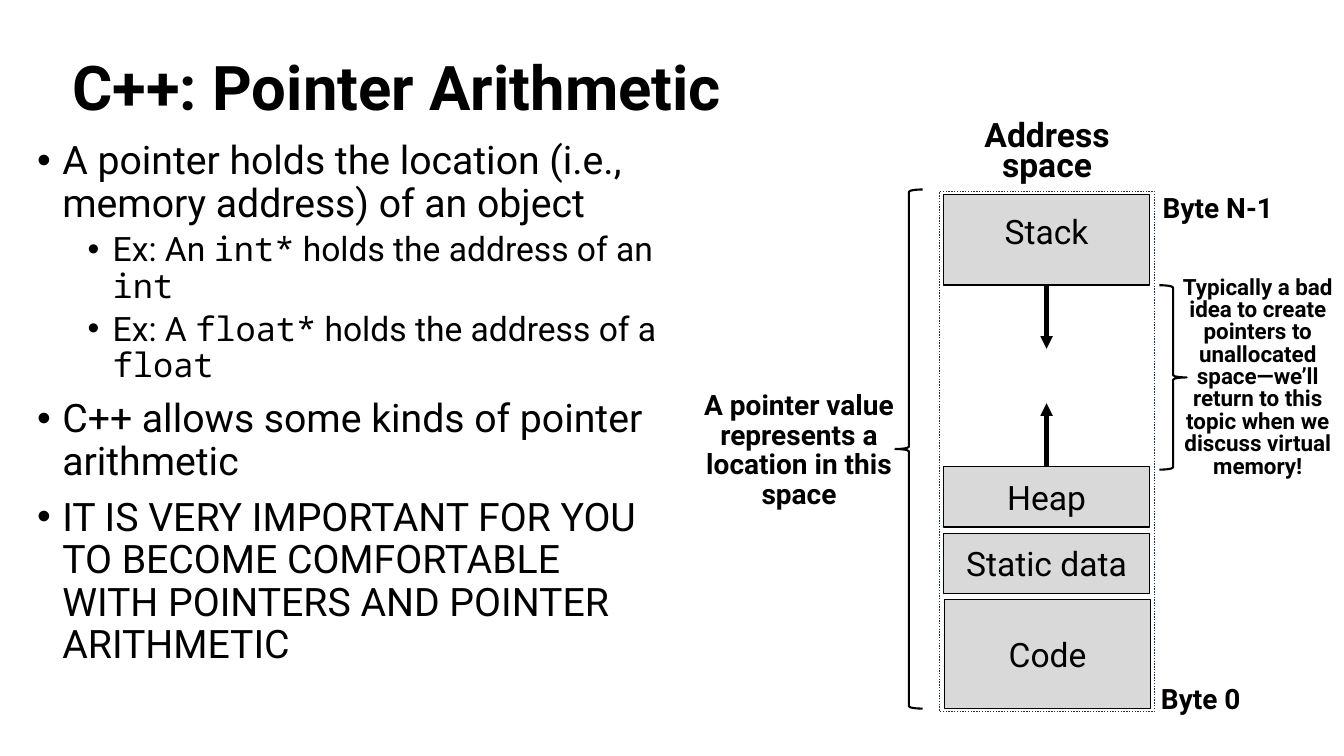
from dataclasses import dataclass

from lxml.etree import SubElement
from pptx import Presentation
from pptx.dml.color import RGBColor
from pptx.enum.dml import MSO_LINE
from pptx.enum.shapes import MSO_CONNECTOR, MSO_SHAPE
from pptx.enum.text import MSO_ANCHOR, MSO_AUTO_SIZE, PP_ALIGN
from pptx.oxml.ns import qn
from pptx.shapes.autoshape import Shape
from pptx.slide import Slide
from pptx.util import Inches, Length, Pt

BLACK = RGBColor(0x00, 0x00, 0x00)
GRAY = RGBColor(0xD9, 0xD9, 0xD9)
NAVY = RGBColor(0x1E, 0x32, 0x56)
FONT = "Roboto"
CODE_FONT = "Noto Sans Mono"


@dataclass(frozen=True)
class Box:
    left: float
    top: float
    width: float
    height: float

    def lengths(self) -> tuple[Length, Length, Length, Length]:
        return (Inches(self.left), Inches(self.top),
                Inches(self.width), Inches(self.height))


@dataclass(frozen=True)
class Label:
    text: str
    box: Box
    size: int
    spacing: float | Length = 1.0


@dataclass(frozen=True)
class Region:
    name: str
    box: Box
    spacing: float | Length = 1.0


@dataclass(frozen=True)
class Brace:
    kind: MSO_SHAPE
    box: Box


@dataclass(frozen=True)
class Arrow:
    start_y: float
    end_y: float


@dataclass(frozen=True)
class Bullet:
    pieces: tuple[str, ...]  # plain text and code alternate
    level: int = 0


BULLETS = [
    Bullet(("A pointer holds the location (i.e., memory address) of an object",)),
    Bullet(("Ex: An ", "int*", " holds the address of an ", "int"), 1),
    Bullet(("Ex: A ", "float*", " holds the address of a ", "float"), 1),
    Bullet(("C++ allows some kinds of pointer arithmetic",)),
    Bullet(("IT IS VERY IMPORTANT FOR YOU TO BECOME COMFORTABLE "
            "WITH POINTERS AND POINTER ARITHMETIC",)),
]
LABELS = [
    Label("Byte 0", Box(11.06, 6.71, 1.7, 0.44), 20),
    Label("Byte N-1", Box(11.23, 1.84, 1.7, 0.44), 20),
    Label("Address space", Box(9.32, 1.19, 2.13, 0.69), 24, Pt(21)),
    Label("A pointer value represents a location in this space",
          Box(6.67, 3.84, 2.51, 1.28), 20, Pt(21)),
    Label("Typically a bad idea to create pointers to unallocated space—we’ll "
          "return to this topic when we discuss virtual memory!",
          Box(11.59, 2.7, 1.77, 2.12), 16, Pt(16)),
]
ADDRESS_SPACE = Box(9.32, 1.9, 2.13, 5.16)
REGIONS = [
    Region("Stack", Box(9.36, 1.93, 2.04, 0.9), Pt(16)),
    Region("Heap", Box(9.36, 4.63, 2.04, 0.6)),
    Region("Static data", Box(9.36, 5.29, 2.04, 0.6)),
    Region("Code", Box(9.37, 5.95, 2.04, 1.08)),
]
ARROW_X = 10.38
ARROWS = [Arrow(2.83, 3.46), Arrow(4.63, 4.0)]
BRACES = [
    Brace(MSO_SHAPE.LEFT_BRACE, Box(8.88, 1.88, 0.27, 5.15)),
    Brace(MSO_SHAPE.RIGHT_BRACE, Box(11.5, 2.83, 0.27, 1.83)),
]


def write_centered(shape: Shape, text: str, size: int, bold: bool,
                   spacing: float | Length) -> None:
    shape.text_frame.word_wrap = True
    paragraph = shape.text_frame.paragraphs[0]
    paragraph.text = text
    paragraph.alignment = PP_ALIGN.CENTER
    paragraph.line_spacing = spacing
    font = paragraph.font
    font.name, font.size, font.bold = FONT, Pt(size), bold
    font.color.rgb = BLACK


def add_title(slide: Slide, text: str) -> None:
    title = slide.shapes.title
    title.left, title.top, title.width, title.height = Box(-0.14, 0.44, 8.16, 0.92).lengths()
    title.text_frame.auto_size = MSO_AUTO_SIZE.NONE
    title.text_frame.vertical_anchor = MSO_ANCHOR.MIDDLE
    write_centered(title, text, 44, True, 0.9)


def add_bullets(slide: Slide, box: Box, bullets: list[Bullet]) -> None:
    frame = slide.shapes.add_textbox(*box.lengths()).text_frame
    frame.word_wrap = True
    for index, bullet in enumerate(bullets):
        paragraph = frame.add_paragraph() if index else frame.paragraphs[0]
        paragraph.level = bullet.level
        paragraph.line_spacing = 0.9
        paragraph.space_before = Pt(5 if bullet.level else 10)
        paragraph.font.size = Pt(24 if bullet.level else 28)
        paragraph.font.color.rgb = BLACK
        for position, piece in enumerate(bullet.pieces):
            run = paragraph.add_run()
            run.text = piece
            run.font.name = CODE_FONT if position % 2 else FONT
        # Bullet mark with a hanging indent
        properties = paragraph._p.get_or_add_pPr()
        properties.set("marL", str(Inches(0.25 + 0.5 * bullet.level)))
        properties.set("indent", str(Inches(-0.25)))
        mark_font = properties.makeelement(qn("a:buFont"), {"typeface": "Arial"})
        mark = properties.makeelement(qn("a:buChar"), {"char": "•"})
        properties.find(qn("a:spcBef")).addnext(mark_font)
        mark_font.addnext(mark)


def add_label(slide: Slide, label: Label) -> None:
    text_box = slide.shapes.add_textbox(*label.box.lengths())
    write_centered(text_box, label.text, label.size, True, label.spacing)


def add_outline(slide: Slide, kind: MSO_SHAPE, box: Box, color: RGBColor,
                width: float) -> Shape:
    shape = slide.shapes.add_shape(kind, *box.lengths())
    shape.shadow.inherit = False
    shape.fill.background()
    shape.line.color.rgb = color
    shape.line.width = Pt(width)
    return shape


def add_region(slide: Slide, region: Region) -> None:
    shape = add_outline(slide, MSO_SHAPE.RECTANGLE, region.box, BLACK, 1)
    shape.fill.solid()
    shape.fill.fore_color.rgb = GRAY
    shape.text_frame.vertical_anchor = MSO_ANCHOR.MIDDLE
    write_centered(shape, region.name, 24, False, region.spacing)


def add_arrow(slide: Slide, arrow: Arrow) -> None:
    connector = slide.shapes.add_connector(
        MSO_CONNECTOR.STRAIGHT, Inches(ARROW_X), Inches(arrow.start_y),
        Inches(ARROW_X), Inches(arrow.end_y))
    connector.line.color.rgb = BLACK
    connector.line.width = Pt(3)
    properties = connector._element.spPr
    SubElement(properties.find(qn("a:ln")), qn("a:tailEnd"), type="triangle")
    SubElement(properties, qn("a:effectLst"))


def main() -> None:
    presentation = Presentation()
    presentation.slide_width = Inches(13.33)
    presentation.slide_height = Inches(7.5)
    slide = presentation.slides.add_slide(presentation.slide_layouts.get_by_name("Title Only"))

    # Title and explanation
    add_title(slide, "C++: Pointer Arithmetic")
    add_bullets(slide, Box(0.27, 1.35, 6.4, 5.99), BULLETS)

    # Address space diagram
    frame = add_outline(slide, MSO_SHAPE.RECTANGLE, ADDRESS_SPACE, NAVY, 1)
    frame.line.dash_style = MSO_LINE.ROUND_DOT
    for region in REGIONS:
        add_region(slide, region)
    for arrow in ARROWS:
        add_arrow(slide, arrow)

    # Braces and labels
    for brace in BRACES:
        add_outline(slide, brace.kind, brace.box, BLACK, 1.5)
    for label in LABELS:
        add_label(slide, label)

    presentation.save("out.pptx")


if __name__ == "__main__":
    main()
